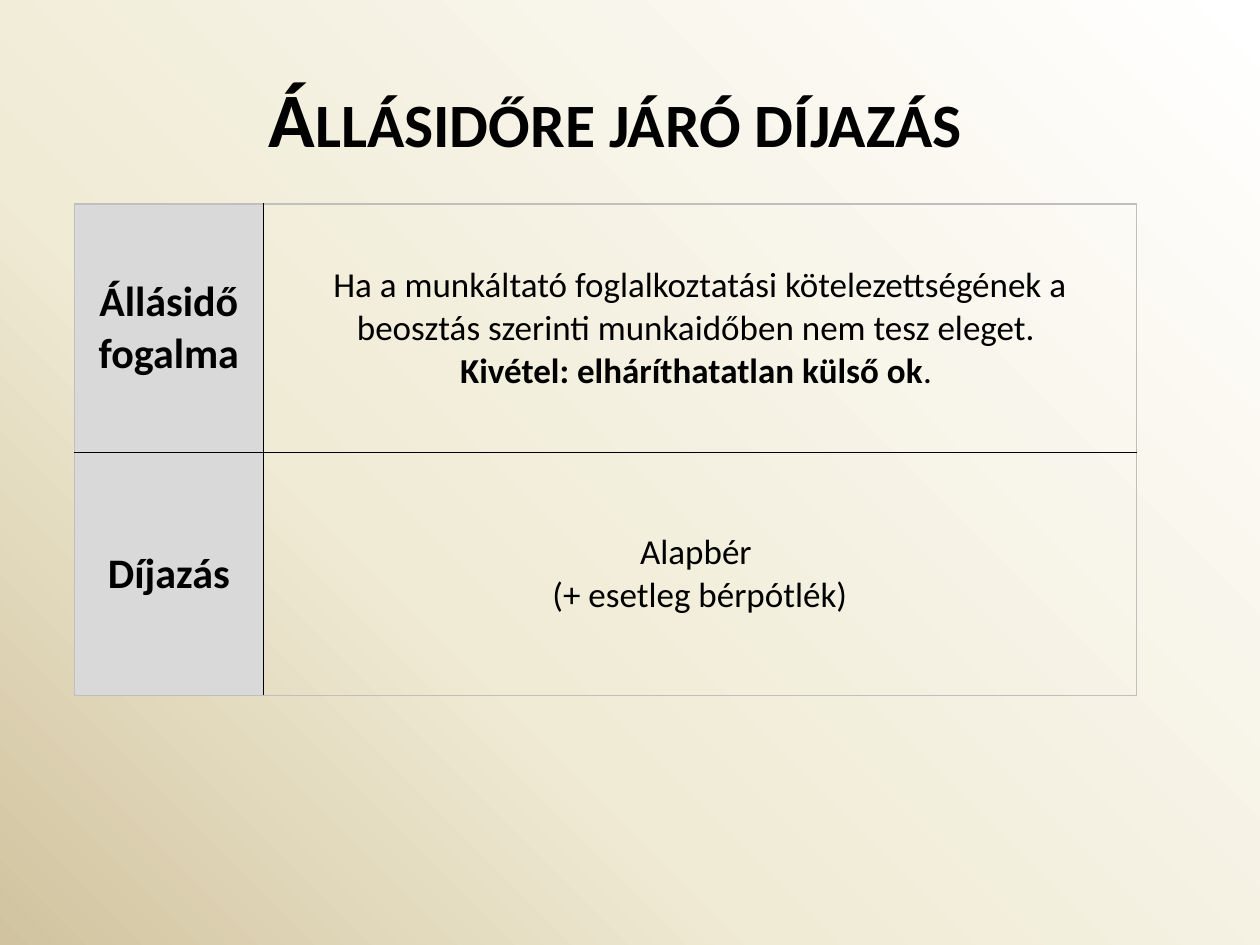
from copy import deepcopy

from pptx import Presentation
from pptx import util as u
from pptx.dml.color import RGBColor
from pptx.enum import text
from pptx.oxml import parse_xml
from pptx.oxml.ns import nsdecls

BLACK, GREY, HEADER = "000000", "BFBFBF", "D9D9D9"
BACKGROUND = [(0, "FFFFFF"), (0.65, "F0EBD5"), (1, "D1C39F")]
COLUMNS = [108, 498.96]
ROWS = [141.84, 138.96]
CELLS = [
    [
        [[("Állásidő fogalma", True)]],
        [
            [("Ha a munkáltató foglalkoztatási kötelezettségének a beosztás "
              "szerinti munkaidőben nem tesz eleget. ", False)],
            [("Kivétel: elháríthatatlan külső ok", True), (". ", False)],
        ],
    ],
    [
        [[("Díjazás", True)]],
        [[("Alapbér ", False)], [("(+ esetleg bérpótlék)", False)]],
    ],
]


def color(value):
    """Turn a hex string into a colour."""
    return RGBColor.from_string(value)


def set_background(s):
    """Fill the slide with the diagonal gradient."""
    fill = s.background.fill
    fill.gradient()
    fill.gradient_angle = 225
    first = fill.gradient_stops[0]._gs
    first.addnext(deepcopy(first))
    for stop, (position, value) in zip(fill.gradient_stops, BACKGROUND):
        stop.position = position
        stop.color.rgb = color(value)


def add_run(p, content, size, bold):
    """Add one black Calibri run and return it."""
    r = p.add_run()
    r.text = content
    r.font.name = "Calibri"
    r.font.size = u.Pt(size)
    r.font.bold = bold
    r.font.color.rgb = color(BLACK)
    return r


def add_title(s, content):
    """Add the centred small-caps title."""
    sp = s.shapes.add_textbox(u.Pt(36), u.Pt(21.6), u.Pt(648), u.Pt(90))
    tf = sp.text_frame
    tf.word_wrap = True
    tf.vertical_anchor = text.MSO_ANCHOR.MIDDLE
    tf.margin_right = u.Pt(24)
    p = tf.paragraphs[0]
    p.alignment = text.PP_ALIGN.CENTER
    r = add_run(p, content, 44, True)
    r.font._element.set("cap", "small")


def set_borders(cell, row, column):
    """Draw black inner lines and grey outer lines around a cell."""
    inner = {"L": column > 0, "R": column < len(COLUMNS) - 1,
             "T": row > 0, "B": row < len(ROWS) - 1}
    properties = cell._tc.get_or_add_tcPr()
    for index, (side, is_inner) in enumerate(inner.items()):
        line = parse_xml(
            f'<a:ln{side} {nsdecls("a")} w="{u.Pt(1)}"><a:solidFill>'
            f'<a:srgbClr val="{BLACK if is_inner else GREY}"/>'
            f'</a:solidFill></a:ln{side}>')
        properties.insert(index, line)


def fill_cell(cell, paragraphs, is_header):
    """Set the fill and the centred text of a cell."""
    if is_header:
        cell.fill.solid()
        cell.fill.fore_color.rgb = color(HEADER)
    else:
        cell.fill.background()
    cell.vertical_anchor = text.MSO_ANCHOR.MIDDLE
    tf = cell.text_frame
    for index, runs in enumerate(paragraphs):
        p = tf.add_paragraph() if index else tf.paragraphs[0]
        p.alignment = text.PP_ALIGN.CENTER
        for content, bold in runs:
            add_run(p, content, 24 if is_header else 20, bold)


def add_pay_table(s):
    """Add the table of idle time and its pay."""
    table = s.shapes.add_table(
        len(ROWS), len(COLUMNS), u.Pt(42.48), u.Pt(116.64),
        u.Pt(sum(COLUMNS)), u.Pt(sum(ROWS))).table
    table.first_row = table.horz_banding = False
    for column, width in zip(table.columns, COLUMNS):
        column.width = u.Pt(width)
    for row, height in zip(table.rows, ROWS):
        row.height = u.Pt(height)
    for i, contents in enumerate(CELLS):
        for j, paragraphs in enumerate(contents):
            cell = table.cell(i, j)
            fill_cell(cell, paragraphs, j == 0)
            set_borders(cell, i, j)


def main():
    """Build and save the slide."""
    prs = Presentation()
    prs.slide_width, prs.slide_height = u.Pt(720), u.Pt(540)
    s = prs.slides.add_slide(prs.slide_layouts[6])
    set_background(s)
    add_title(s, "Állásidőre járó díjazás")
    add_pay_table(s)
    prs.save("out.pptx")


if __name__ == "__main__":
    main()
